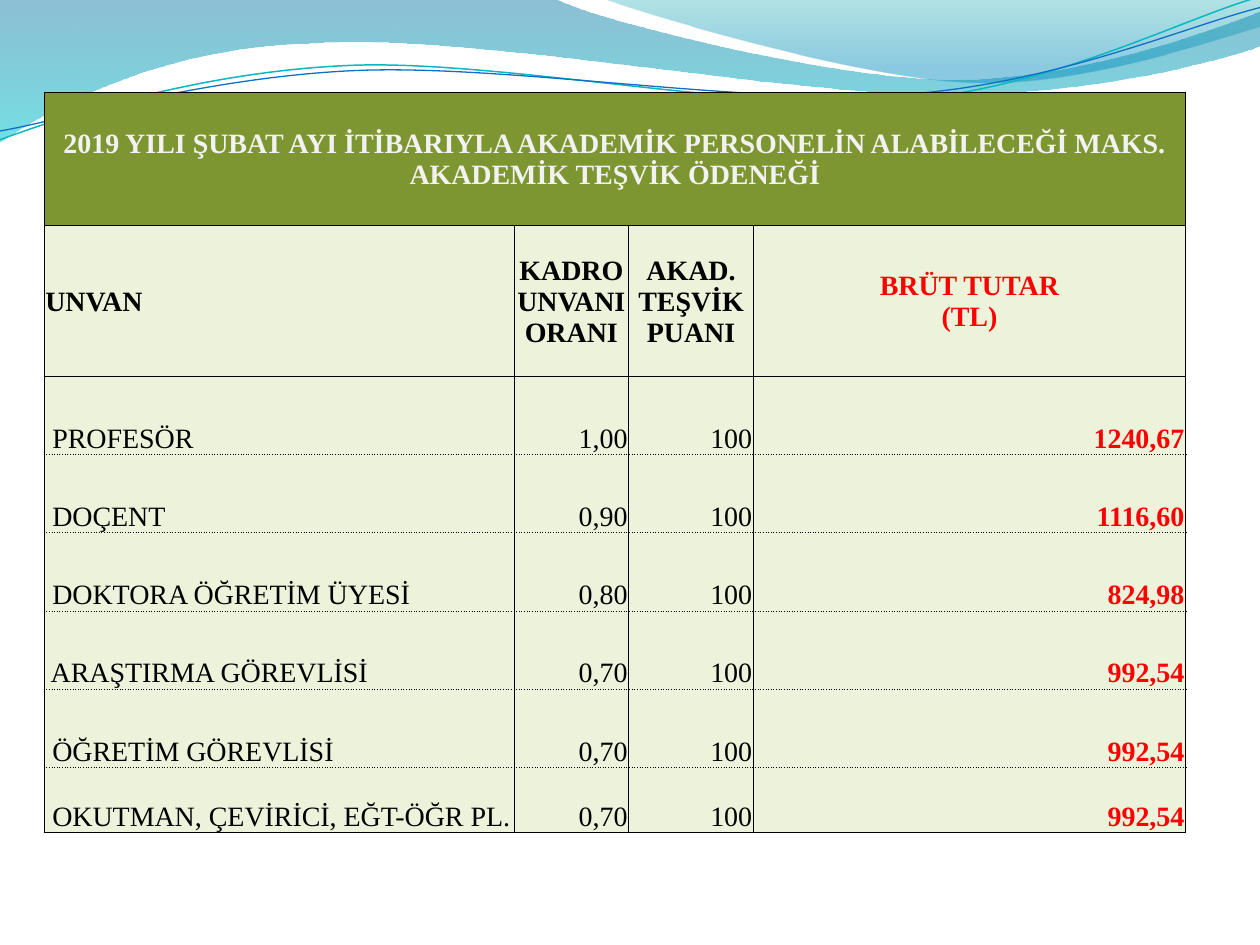
"""Build a slide with a table of academic incentive payments under a wave header."""
from lxml import etree
from pptx import Presentation
from pptx.dml.color import RGBColor
from pptx.enum.text import MSO_ANCHOR, PP_ALIGN
from pptx.oxml.ns import qn
from pptx.util import Inches, Pt

LEFT, CENTER, RIGHT = PP_ALIGN.LEFT, PP_ALIGN.CENTER, PP_ALIGN.RIGHT
MIDDLE, BOTTOM = MSO_ANCHOR.MIDDLE, MSO_ANCHOR.BOTTOM

THEME = {
    "font": "Times New Roman", "size": Pt(16), "border": Pt(0.5),
    "black": "000000", "red": "FF0000", "title": "F2F2F2",
    "title_fill": "7E9632", "body_fill": "EDF3DB",
    "wide_wave": [("0074A1", 0, 45), ("00C6CF", 1, 55)],
    "right_wave": [("00A1A9", 0, 30), ("008BBF", 0.8, 45)],
    "teal": "0AB8BF", "blue": "0F6FC6",
}

prs = Presentation()
prs.slide_width, prs.slide_height = Inches(10), Inches(7.5)
UNIT = prs.slide_width // 10
s = prs.slides.add_slide(prs.slide_layouts[6])


def add_wave(segments, closed):
    """Draw straight (2 values) and cubic (6 values) segments as one outline."""
    ends = [(seg[-2] * UNIT, seg[-1] * UNIT) for seg in segments]
    builder = s.shapes.build_freeform(*ends[0])
    builder.add_line_segments(ends[1:], close=closed)
    sp = builder.convert_to_shape()
    sp.shadow.inherit = False
    for node, seg in zip(list(sp.element.iter(qn("a:lnTo"))), segments[1:]):
        if len(seg) == 6:
            curve = etree.Element(qn("a:cubicBezTo"))
            for x, y in zip(seg[::2], seg[1::2]):
                etree.SubElement(curve, qn("a:pt"), x=str(round(x * UNIT) - sp.left),
                                 y=str(round(y * UNIT) - sp.top))
            node.getparent().replace(node, curve)
    return sp


def add_border(cell, side, dash):
    """Give one side of a table cell a thin line."""
    ln = etree.SubElement(cell._tc.get_or_add_tcPr(), qn(f"a:ln{side}"), w=str(THEME["border"]))
    fill = etree.SubElement(ln, qn("a:solidFill"))
    etree.SubElement(fill, qn("a:srgbClr"), val=THEME["black"])
    etree.SubElement(ln, qn("a:prstDash"), val=dash)


filled_waves = [
    ("wide_wave", [(0, 0), (4.4, -0.01), (4.76, 0.17, 6.64, 0.63, 7.58, 0.63),
                   (8.53, 0.63, 9.58, 0.26, 10, 0.09), (10.01, 0.36),
                   (9.83, 0.44, 8.7, 0.76, 7.46, 0.75),
                   (6.22, 0.75, 3.82, 0.28, 2.57, 0.34),
                   (1.29, 0.36, 0.46, 0.83, -0.01, 1.13), (0, 0)]),
    ("right_wave", [(4.79, -0.01), (5.09, 0.11, 6.82, 0.62, 7.69, 0.65),
                    (8.56, 0.69, 9.61, 0.32, 10, 0.21), (10, 0), (4.79, -0.01)]),
]
for name, segments in filled_waves:
    sp = add_wave(segments, True)
    sp.line.fill.background()
    sp.fill.gradient()
    sp.fill.gradient_angle = 270
    for stop, (color, position, _) in zip(sp.fill.gradient_stops, THEME[name]):
        stop.color.rgb = RGBColor.from_string(color)
        stop.position = position
    for clr, (_, _, opacity) in zip(sp.element.iter(qn("a:srgbClr")), THEME[name]):
        etree.SubElement(clr, qn("a:alpha"), val=str(opacity * 1000))

line_waves = [
    ("teal", 0.85, [(0, 1.11), (0.48, 0.93, 1.58, 0.57, 2.77, 0.52),
                    (3.95, 0.47, 5.93, 0.89, 7.13, 0.8),
                    (8.33, 0.71, 9.38, 0.15, 9.98, -0.02)]),
    ("blue", 0.75, [(0, 1.04), (0.47, 0.96, 1.64, 0.61, 2.83, 0.56),
                    (4.03, 0.51, 5.97, 0.84, 7.17, 0.75),
                    (8.36, 0.67, 9.41, 0.21, 10, 0.06)]),
]
for name, width, segments in line_waves:
    sp = add_wave(segments, False)
    sp.fill.background()
    sp.line.color.rgb = RGBColor.from_string(THEME[name])
    sp.line.width = Pt(width)

title = ("2019 YILI ŞUBAT AYI İTİBARIYLA AKADEMİK PERSONELİN ALABİLECEĞİ MAKS. "
         "AKADEMİK TEŞVİK ÖDENEĞİ")
headers = ["UNVAN", "KADRO UNVANI ORANI", "AKAD. TEŞVİK PUANI", "BRÜT TUTAR\n(TL)"]
payments = [
    ("PROFESÖR", "1,00", "1240,67"),
    ("DOÇENT", "0,90", "1116,60"),
    ("DOKTORA ÖĞRETİM ÜYESİ", "0,80", "824,98"),
    ("ARAŞTIRMA GÖREVLİSİ", "0,70", "992,54"),
    ("ÖĞRETİM GÖREVLİSİ", "0,70", "992,54"),
    ("OKUTMAN, ÇEVİRİCİ, EĞT-ÖĞR PL.", "0,70", "992,54"),
]
rows = [[title, "", "", ""], headers]
rows += [[f" {rank}", rate, "100", amount] for rank, rate, amount in payments]
col_widths = [3.73, 0.91, 0.99, 3.43]
row_heights = [1.06, 1.2] + [0.62] * 5 + [0.52]
last = len(rows) - 1

frame = s.shapes.add_table(len(rows), len(col_widths), round(0.35 * UNIT), round(0.73 * UNIT),
                           round(sum(col_widths) * UNIT), round(sum(row_heights) * UNIT))
table = frame.table
table.first_row = table.horz_banding = False
for column, width in zip(table.columns, col_widths):
    column.width = round(width * UNIT)
for row, height in zip(table.rows, row_heights):
    row.height = round(height * UNIT)
table.cell(0, 0).merge(table.cell(0, 3))

for i, texts in enumerate(rows):
    for j, text in enumerate(texts):
        cell = table.cell(i, j)
        add_border(cell, "L", "solid")
        add_border(cell, "R", "solid")
        add_border(cell, "T", "dot" if i > 2 else "solid")
        add_border(cell, "B", "dot" if 2 <= i < last else "solid")
        cell.fill.solid()
        fill = THEME["body_fill" if i else "title_fill"]
        cell.fill.fore_color.rgb = RGBColor.from_string(fill)
        cell.margin_left = cell.margin_right = cell.margin_top = round(0.01 * UNIT)
        cell.margin_bottom = 0
        cell.vertical_anchor = MIDDLE if i < 2 else BOTTOM
        if not text:
            continue
        p = cell.text_frame.paragraphs[0]
        if i == 0:
            p.alignment, color = CENTER, "title"
        else:
            p.alignment = LEFT if j == 0 else CENTER if i == 1 else RIGHT
            color = "red" if j == 3 else "black"
        for k, line in enumerate(text.split("\n")):
            if k:
                p.add_line_break()
            r = p.add_run()
            r.text = line
            r.font.name, r.font.size = THEME["font"], THEME["size"]
            r.font.bold = i < 2 or j == 3
            r.font.color.rgb = RGBColor.from_string(THEME[color])

prs.save("out.pptx")
